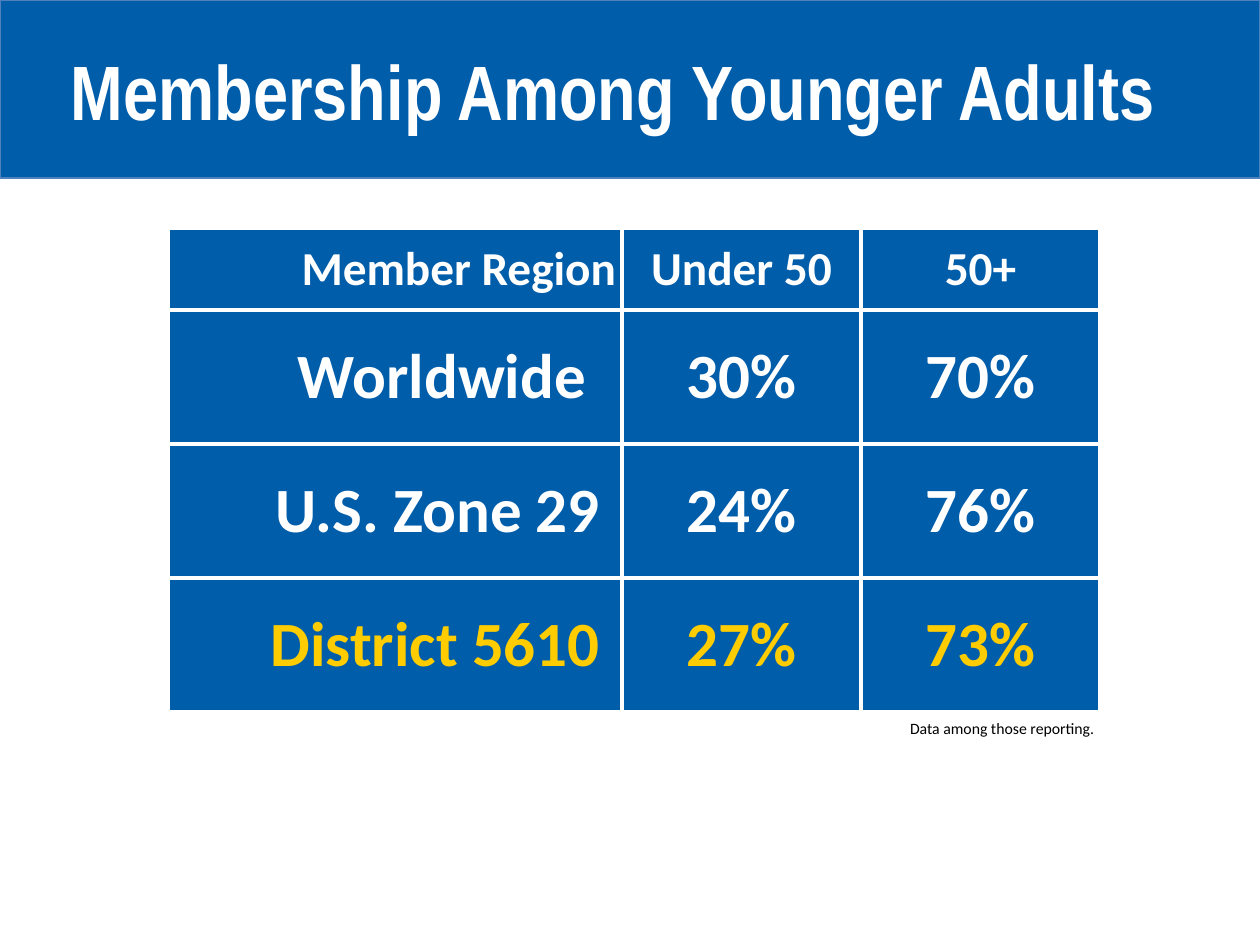
from lxml import etree
from pptx import Presentation
from pptx.dml.color import RGBColor
from pptx.enum.shapes import MSO_SHAPE
from pptx.enum.text import MSO_ANCHOR, MSO_AUTO_SIZE, PP_ALIGN
from pptx.oxml.ns import qn
from pptx.util import Pt

RECTANGLE = MSO_SHAPE.RECTANGLE
TOP, MIDDLE = MSO_ANCHOR.TOP, MSO_ANCHOR.MIDDLE
LEFT, CENTER, RIGHT = PP_ALIGN.LEFT, PP_ALIGN.CENTER, PP_ALIGN.RIGHT
NO_FIT = MSO_AUTO_SIZE.NONE
SCALE = 914400 / 126
PAGE_WIDTH, PAGE_HEIGHT = 1260, 945
INSET = 6
COLORS = {"blue": "005DAA", "edge": "4F81BD", "white": "FFFFFF", "gold": "FFCC00", "black": "000000"}
FORMATS = {
    "title": {"name": "Arial Narrow", "size": Pt(44), "bold": True},
    "header": {"name": "Calibri", "size": Pt(27), "bold": True},
    "body": {"name": "Calibri", "size": Pt(36), "bold": True},
    "note": {"name": "Calibri", "size": Pt(9), "bold": False},
}
COLUMN_WIDTHS = [454, 239, 239]
ROW_HEIGHTS = [82, 134, 134, 134]
ROWS = [
    (("Member Region", "Under 50", "50+"), "header", "white", 6),
    (("Worldwide", "30%", "70%"), "body", "white", 36),
    (("U.S. Zone 29", "24%", "76%"), "body", "white", 22),
    (("District 5610", "27%", "73%"), "body", "gold", 22),
]


def px(length):
    """Turn a length in px into EMU."""
    return round(length * SCALE)


def rgb(name):
    """Look up a named colour."""
    return RGBColor.from_string(COLORS[name])


def set_attributes(target, values):
    """Set each named value on the target."""
    for name, value in values.items():
        setattr(target, name, value)


def place(shape, box):
    """Move a shape to a box of left, top, width and height."""
    set_attributes(shape, dict(zip(("left", "top", "width", "height"), map(px, box))))


def margins(right=INSET):
    """Give the text insets, with a choice of right inset."""
    values = {f"margin_{side}": px(INSET) for side in ("left", "top", "bottom")}
    return {**values, "margin_right": px(right)}


def write(frame, text, style, color, align):
    """Fill a text frame with one formatted paragraph."""
    para = frame.paragraphs[0]
    para.alignment = align
    span = para.add_run()
    span.text = text
    set_attributes(span.font, FORMATS[style])
    span.font.color.rgb = rgb(color)


def set_borders(cell, color, width):
    """Draw the same border on all four sides of a cell."""
    properties = cell._tc.get_or_add_tcPr()
    for index, side in enumerate("LRTB"):
        line = etree.Element(qn(f"a:ln{side}"), w=str(Pt(width)))
        fill = etree.SubElement(line, qn("a:solidFill"))
        etree.SubElement(fill, qn("a:srgbClr"), val=COLORS[color])
        properties.insert(index, line)


def add_heading(page, box):
    """Add the blue banner with the title on it."""
    left, top, width, height = box
    banner = page.shapes.add_shape(RECTANGLE, *map(px, box))
    banner.shadow.inherit = False
    banner.fill.solid()
    banner.fill.fore_color.rgb = rgb("blue")
    banner.line.color.rgb = rgb("edge")
    banner.line.width = Pt(0.75)
    title = page.shapes.title
    title._element.addprevious(banner._element)
    place(title, (left + 65, top + 38, width - 96, 100))
    frame = title.text_frame
    set_attributes(frame, {**margins(), "word_wrap": True, "auto_size": NO_FIT, "vertical_anchor": TOP})
    write(frame, "Membership Among Younger Adults", "title", "white", LEFT)


def add_membership_table(page, box):
    """Add the table of membership shares by age."""
    table = page.shapes.add_table(len(ROWS), len(COLUMN_WIDTHS), *map(px, box)).table
    set_attributes(table, {"first_row": False, "horz_banding": False})
    for column, width in zip(table.columns, COLUMN_WIDTHS):
        column.width = px(width)
    for row, height, (texts, style, color, indent) in zip(table.rows, ROW_HEIGHTS, ROWS):
        row.height = px(height)
        for index, (cell, text) in enumerate(zip(row.cells, texts)):
            right, align = (INSET, CENTER) if index else (indent, RIGHT)
            set_attributes(cell, {**margins(right), "vertical_anchor": MIDDLE})
            cell.fill.solid()
            cell.fill.fore_color.rgb = rgb("blue")
            set_borders(cell, "white", 3)
            write(cell.text_frame, text, style, color, align)


def add_note(page, box):
    """Add the remark below the table."""
    frame = page.shapes.add_textbox(*map(px, box)).text_frame
    set_attributes(frame, {**margins(), "word_wrap": True})
    write(frame, "Data among those reporting.", "note", "black", RIGHT)


def main():
    """Build and save the deck."""
    deck = Presentation()
    set_attributes(deck, {"slide_width": px(PAGE_WIDTH), "slide_height": px(PAGE_HEIGHT)})
    page = deck.slides.add_slide(deck.slide_layouts[5])
    left, top = 168, 228
    width, height = sum(COLUMN_WIDTHS), sum(ROW_HEIGHTS)
    note_width = 275
    add_heading(page, (0, 0, PAGE_WIDTH, 178))
    add_membership_table(page, (left, top, width, height))
    add_note(page, (left + width - note_width, top + height + 1, note_width, 29))
    deck.save("out.pptx")


if __name__ == "__main__":
    main()
